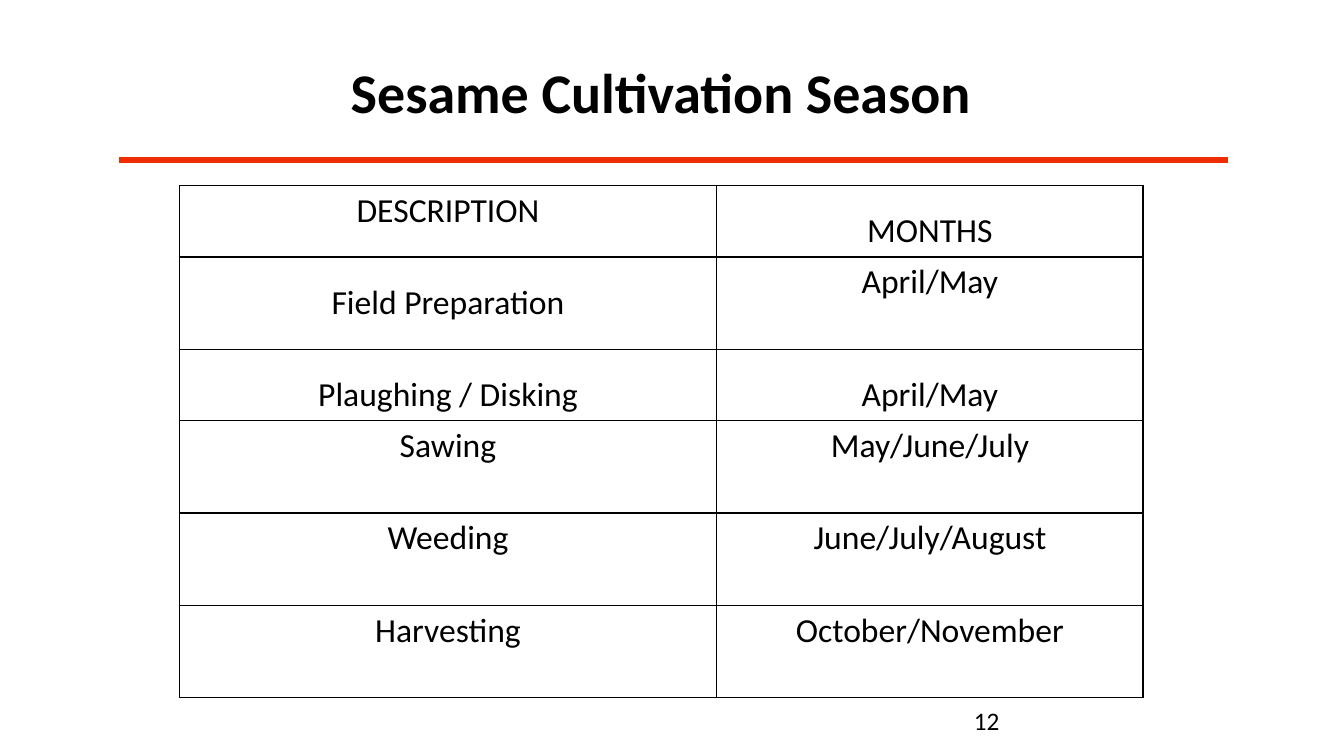
from dataclasses import dataclass
from typing import NamedTuple

from lxml.etree import SubElement
from pptx import Presentation
from pptx.dml.color import RGBColor
from pptx.enum.shapes import MSO_CONNECTOR
from pptx.enum.text import MSO_ANCHOR, MSO_AUTO_SIZE, PP_ALIGN
from pptx.oxml.ns import qn
from pptx.slide import Slide
from pptx.table import _Cell
from pptx.text.text import _Paragraph
from pptx.util import Inches, Pt

SLIDE_WIDTH, SLIDE_HEIGHT = Inches(13.33), Inches(7.5)
GRID_COLUMNS, GRID_ROWS = 96, 54


@dataclass(frozen=True)
class Theme:
    font: str = "Calibri"
    text: RGBColor = RGBColor(0, 0, 0)
    paper: RGBColor = RGBColor(255, 255, 255)
    accent: RGBColor = RGBColor(0xEE, 0x2D, 0x00)
    title_size: int = 40
    table_size: int = 24
    number_size: int = 18
    loose_spacing: float = 1.5
    accent_width: float = 4.5
    border_width: int = 1


class Area(NamedTuple):
    column: float
    row: float
    width: float
    height: float


class Entry(NamedTuple):
    text: str
    loose: bool = False


class Activity(NamedTuple):
    description: Entry
    months: Entry
    height: float


THEME = Theme()
TITLE_AREA = Area(23.2, 2.9, 48, 6.4)
RULE_AREA = Area(8.5, 11.45, 79.2, 0)
TABLE_AREA = Area(12.8, 13.25, 68.85, 36.58)
NUMBER_AREA = Area(68.85, 50.04, 22.4, 2.9)
COLUMN_WIDTHS = (38.4, 30.45)
SHORT_ROW, TALL_ROW = 5.11, 6.59
CALENDAR = (
    Activity(Entry("DESCRIPTION"), Entry("MONTHS", True), SHORT_ROW),
    Activity(Entry("Field Preparation", True), Entry("April/May"), TALL_ROW),
    Activity(Entry("Plaughing / Disking", True), Entry("April/May", True), SHORT_ROW),
    Activity(Entry("Sawing"), Entry("May/June/July"), TALL_ROW),
    Activity(Entry("Weeding"), Entry("June/July/August"), TALL_ROW),
    Activity(Entry("Harvesting"), Entry("October/November"), TALL_ROW),
)


def across(columns: float) -> int:
    return round(SLIDE_WIDTH * columns / GRID_COLUMNS)


def down(rows: float) -> int:
    return round(SLIDE_HEIGHT * rows / GRID_ROWS)


def place(area: Area) -> tuple[int, int, int, int]:
    return across(area.column), down(area.row), across(area.width), down(area.height)


def write(paragraph: _Paragraph, text: str, size: int, alignment: PP_ALIGN,
          loose: bool = False, bold: bool = False) -> None:
    paragraph.text = text
    paragraph.alignment = alignment
    if loose:
        paragraph.line_spacing = THEME.loose_spacing
    font = paragraph.font
    font.name, font.size, font.bold = THEME.font, Pt(size), bold
    font.color.rgb = THEME.text


def draw_title(slide: Slide, text: str) -> None:
    title = slide.shapes.title
    title.left, title.top, title.width, title.height = place(TITLE_AREA)
    title.fill.solid()
    title.fill.fore_color.rgb = THEME.paper
    title.line.color.rgb = THEME.paper
    title.line.width = Pt(1)
    frame = title.text_frame
    frame.auto_size = MSO_AUTO_SIZE.NONE
    frame.vertical_anchor = MSO_ANCHOR.BOTTOM
    write(frame.paragraphs[0], text, THEME.title_size, PP_ALIGN.CENTER, loose=True, bold=True)


def draw_rule(slide: Slide) -> None:
    left, top, width, height = place(RULE_AREA)
    rule = slide.shapes.add_connector(MSO_CONNECTOR.STRAIGHT, left, top, left + width, top + height)
    rule.line.color.rgb = THEME.accent
    rule.line.width = Pt(THEME.accent_width)
    SubElement(rule._element.spPr, qn("a:effectLst"))


def add_borders(cell: _Cell) -> None:
    properties = cell._tc.get_or_add_tcPr()
    for position, side in enumerate(("a:lnL", "a:lnR", "a:lnT", "a:lnB")):
        border = SubElement(properties, qn(side), w=str(Pt(THEME.border_width)))
        fill = SubElement(border, qn("a:solidFill"))
        SubElement(fill, qn("a:srgbClr"), val=str(THEME.text))
        properties.insert(position, border)


def draw_cell(cell: _Cell, entry: Entry) -> None:
    cell.fill.background()
    cell.margin_left = cell.margin_right = Inches(0.13)
    cell.margin_top = cell.margin_bottom = Inches(0.05)
    cell.vertical_anchor = MSO_ANCHOR.TOP
    write(cell.text_frame.paragraphs[0], entry.text, THEME.table_size, PP_ALIGN.CENTER, entry.loose)
    add_borders(cell)


def draw_calendar(slide: Slide) -> None:
    frame = slide.shapes.add_table(len(CALENDAR), len(COLUMN_WIDTHS), *place(TABLE_AREA))
    table = frame.table
    table.first_row = table.horz_banding = False
    for column, width in zip(table.columns, COLUMN_WIDTHS):
        column.width = across(width)
    for row, activity in zip(table.rows, CALENDAR):
        row.height = down(activity.height)
        for cell, entry in zip(row.cells, (activity.description, activity.months)):
            draw_cell(cell, entry)


def draw_number(slide: Slide, number: str) -> None:
    frame = slide.shapes.add_textbox(*place(NUMBER_AREA)).text_frame
    frame.word_wrap = True
    write(frame.paragraphs[0], number, THEME.number_size, PP_ALIGN.LEFT)


def main() -> None:
    """Build the sesame cultivation season slide."""
    presentation = Presentation()
    presentation.slide_width, presentation.slide_height = SLIDE_WIDTH, SLIDE_HEIGHT
    slide = presentation.slides.add_slide(presentation.slide_layouts[5])
    draw_rule(slide)
    draw_number(slide, "12")
    draw_title(slide, "Sesame Cultivation Season")
    draw_calendar(slide)
    presentation.save("out.pptx")


if __name__ == "__main__":
    main()
